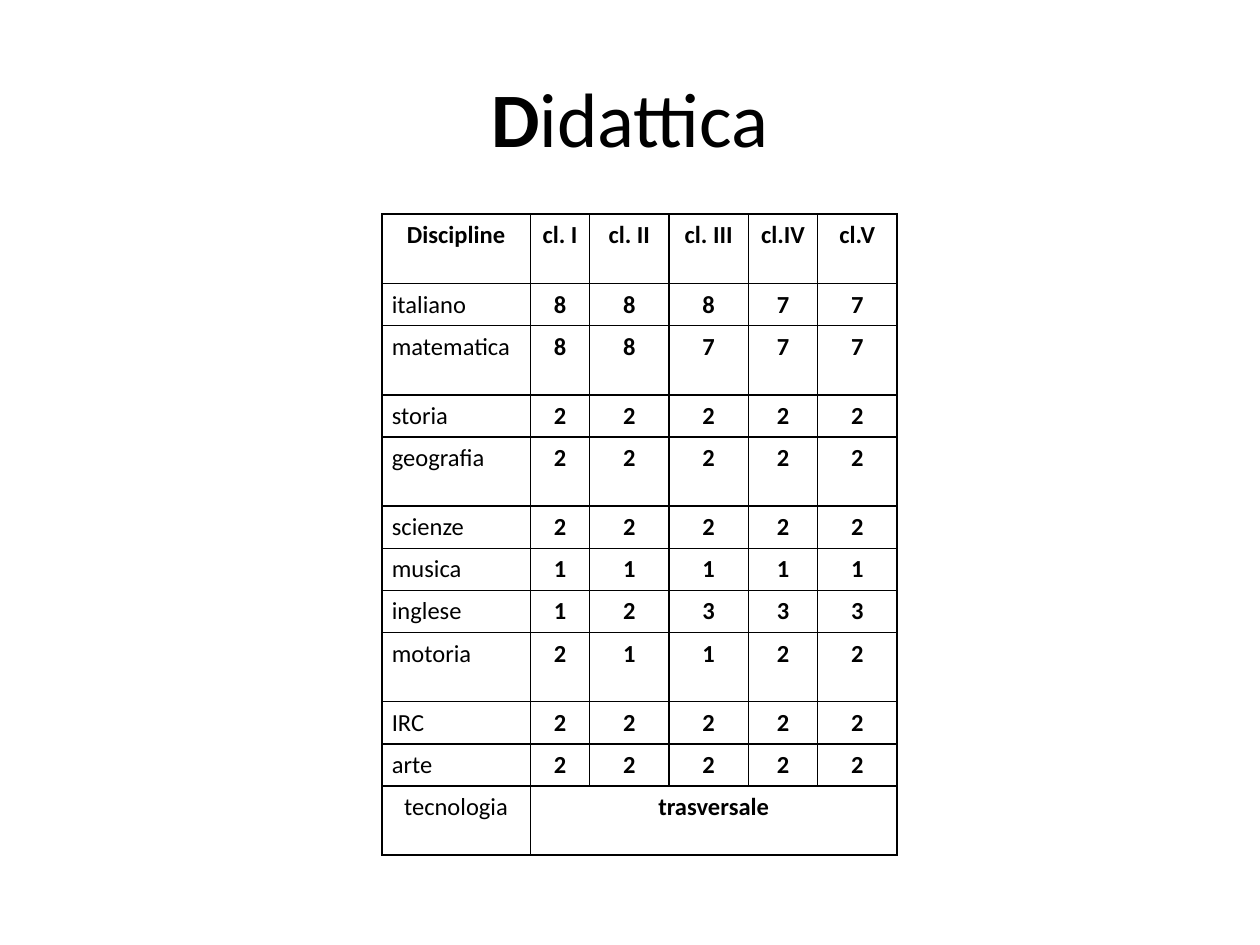
from dataclasses import dataclass

from lxml import etree
from pptx import Presentation
from pptx.dml.color import RGBColor
from pptx.enum.text import MSO_ANCHOR, PP_ALIGN
from pptx.oxml.ns import qn
from pptx.util import Inches, Pt

CENTER, LEFT = PP_ALIGN.CENTER, PP_ALIGN.LEFT
MIDDLE = MSO_ANCHOR.MIDDLE


@dataclass(frozen=True)
class Theme:
    font: str = "Calibri"
    ink: str = "000000"
    title_size: int = 44
    table_size: int = 14
    border: float = 1


THEME = Theme()
COLUMN_WIDTHS = [1.18, 0.47, 0.63, 0.63, 0.55, 0.63]
SHORT_ROW, TALL_ROW = 0.31, 0.55
TALL_SUBJECTS = {"Discipline", "matematica", "geografia", "motoria", "tecnologia"}
HEADER = ["Discipline", "cl. I", "cl. II", "cl. III", "cl.IV", "cl.V"]
WEEKLY_HOURS = {
    "italiano": [8, 8, 8, 7, 7],
    "matematica": [8, 8, 7, 7, 7],
    "storia": [2, 2, 2, 2, 2],
    "geografia": [2, 2, 2, 2, 2],
    "scienze": [2, 2, 2, 2, 2],
    "musica": [1, 1, 1, 1, 1],
    "inglese": [1, 2, 3, 3, 3],
    "motoria": [2, 1, 1, 2, 2],
    "IRC": [2, 2, 2, 2, 2],
    "arte": [2, 2, 2, 2, 2],
}
CROSS_SUBJECT = ["tecnologia", "trasversale"]


def style_font(font, size, bold):
    font.name = THEME.font
    font.size = Pt(size)
    font.bold = bold
    font.color.rgb = RGBColor.from_string(THEME.ink)


def add_title(page, left, top, width, height):
    box = page.shapes.add_textbox(Inches(left), Inches(top), Inches(width), Inches(height))
    frame = box.text_frame
    frame.word_wrap = True
    frame.vertical_anchor = MIDDLE
    para = frame.paragraphs[0]
    para.alignment = CENTER
    for text, bold in (("D", True), ("idattica", False)):
        span = para.add_run()
        span.text = text
        style_font(span.font, THEME.title_size, bold)


def draw_borders(cell):
    properties = cell._tc.get_or_add_tcPr()
    for side in ("lnL", "lnR", "lnT", "lnB"):
        line = etree.SubElement(properties, qn(f"a:{side}"), w=str(Pt(THEME.border)))
        fill = etree.SubElement(line, qn("a:solidFill"))
        etree.SubElement(fill, qn("a:srgbClr"), val=THEME.ink)


def write_cell(cell, text, bold, alignment):
    para = cell.text_frame.paragraphs[0]
    para.text = text
    para.alignment = alignment
    style_font(para.font, THEME.table_size, bold)


def add_hours_table(page, left, top):
    rows = [HEADER]
    rows += [[subject, *map(str, hours)] for subject, hours in WEEKLY_HOURS.items()]
    rows.append(CROSS_SUBJECT)
    heights = [TALL_ROW if row[0] in TALL_SUBJECTS else SHORT_ROW for row in rows]
    table = page.shapes.add_table(
        len(rows), len(COLUMN_WIDTHS), Inches(left), Inches(top),
        Inches(sum(COLUMN_WIDTHS)), Inches(sum(heights))).table
    table.first_row = table.horz_banding = False

    for column, width in zip(table.columns, COLUMN_WIDTHS):
        column.width = Inches(width)
    for row, height in zip(table.rows, heights):
        row.height = Inches(height)
    for cell in table.iter_cells():
        cell.margin_left = cell.margin_right = Inches(0.08)
        cell.margin_top = cell.margin_bottom = Inches(0.05)
        draw_borders(cell)
        cell.fill.background()

    last = len(rows) - 1
    table.cell(last, 1).merge(table.cell(last, len(COLUMN_WIDTHS) - 1))
    for r, texts in enumerate(rows):
        for c, text in enumerate(texts):
            is_subject = c == 0 and r > 0
            alignment = LEFT if is_subject and r < last else CENTER
            write_cell(table.cell(r, c), text, not is_subject, alignment)


def main():
    deck = Presentation()
    deck.slide_width, deck.slide_height = Inches(10), Inches(7.5)
    page = deck.slides.add_slide(deck.slide_layouts[6])
    add_title(page, 0.5, 0.3, 9, 1.25)
    add_hours_table(page, 3.03, 1.7)
    deck.save("out.pptx")


if __name__ == "__main__":
    main()
